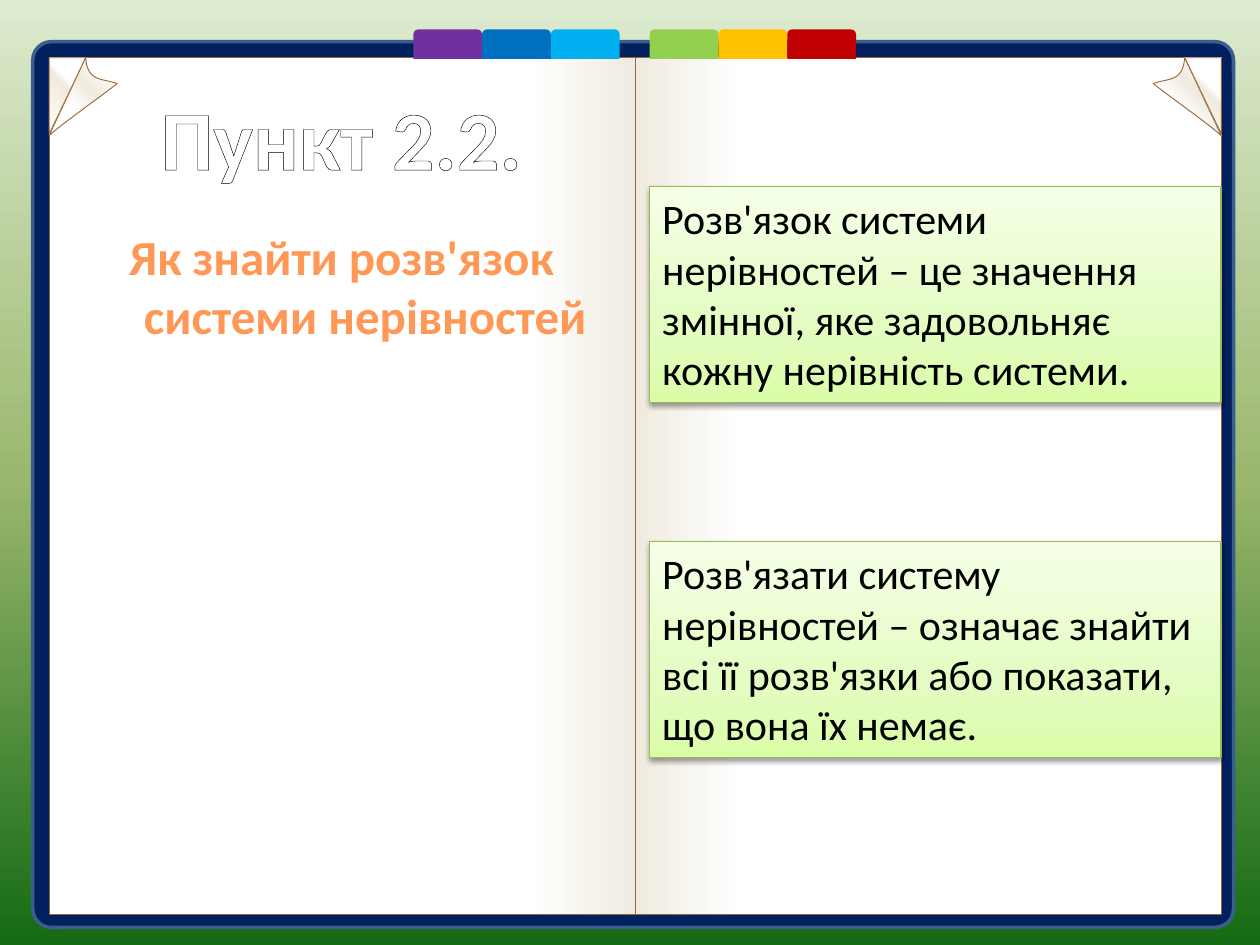
"""Build the notebook slide about solving systems of inequalities."""
from dataclasses import dataclass

from lxml.etree import SubElement
from pptx import Presentation
from pptx.dml.color import RGBColor
from pptx.enum.shapes import MSO_SHAPE as Preset
from pptx.enum.text import MSO_ANCHOR as Anchor
from pptx.enum.text import MSO_AUTO_SIZE as AutoSize
from pptx.enum.text import PP_ALIGN as Align
from pptx.oxml.ns import qn
from pptx.util import Pt

BLACK = RGBColor(0x00, 0x00, 0x00)
WHITE = RGBColor(0xFF, 0xFF, 0xFF)
NAVY = RGBColor(0x00, 0x20, 0x60)
STEEL = RGBColor(0x3A, 0x5F, 0x8C)
BROWN = RGBColor(0x99, 0x66, 0x33)
CREAM = RGBColor(0xF0, 0xEB, 0xE0)
OLIVE = RGBColor(0x98, 0xB9, 0x55)
PURPLE = RGBColor(0x70, 0x30, 0xA0)
BLUE = RGBColor(0x00, 0x70, 0xC0)
SKY = RGBColor(0x00, 0xB0, 0xF0)
GREEN = RGBColor(0x92, 0xD0, 0x50)
AMBER = RGBColor(0xFF, 0xC0, 0x00)
RED = RGBColor(0xC0, 0x00, 0x00)
MINT = RGBColor(0xDD, 0xEB, 0xCF)
MOSS = RGBColor(0x9C, 0xB8, 0x6E)
FOREST = RGBColor(0x15, 0x6B, 0x13)
LIME = RGBColor(0xDA, 0xFD, 0xA7)
PALE_LIME = RGBColor(0xE4, 0xFC, 0xC2)
LIME_WHITE = RGBColor(0xF5, 0xFF, 0xE7)
RUST = RGBColor(0x9D, 0x47, 0x00)
ORANGE = RGBColor(0xFF, 0x98, 0x56)
PEACH = RGBColor(0xFF, 0xF5, 0xF1)


@dataclass
class Gradient:
    """Stops as (percent, colour) pairs and a clockwise angle in degrees."""
    stops: tuple
    angle: int


BACKDROP = Gradient(((0, MINT), (50, MOSS), (100, FOREST)), 90)
PAGE_STOPS = ((0, WHITE), (82, WHITE), (100, CREAM))
CORNER = Gradient(((0, WHITE), (57, CREAM), (65, WHITE)), 315)
FOLD = Gradient(((12, WHITE), (40, CREAM), (65, WHITE)), 135)
CARD = Gradient(((0, LIME), (35, PALE_LIME), (100, LIME_WHITE)), 270)
QUESTION = Gradient(((0, RUST), (78, ORANGE), (100, PEACH)), 90)
PAGE_LINE = (BROWN, 0.5)
SPINE, PAGE_LEFT, PAGE_TOP = 363, 28.1, 33
PAGE_WIDTH, PAGE_HEIGHT = SPINE - PAGE_LEFT, 489.5
CARD_LEFT = 371.3


def bezier(start, control1, control2, end, steps=16):
    """Return points along a cubic curve, ends included."""
    def at(t):
        weights = ((1 - t) ** 3, 3 * t * (1 - t) ** 2, 3 * t * t * (1 - t), t ** 3)
        knots = (start, control1, control2, end)
        return tuple(sum(w * k[axis] for w, k in zip(weights, knots)) for axis in (0, 1))
    return [at(step / steps) for step in range(steps + 1)]


def mirror(points):
    """Reflect points across the notebook spine."""
    return [(2 * SPINE - x, y) for x, y in points]


class Notebook:
    """Holds the text style and the current slide, and draws its elements."""

    font_style = {"name": "Calibri", "bold": False}

    def __init__(self, slide):
        self.slide = slide

    def paint(self, fill, value, owner):
        """Apply a solid colour or a gradient to a fill of the owner."""
        if not isinstance(value, Gradient):
            fill.solid()
            fill.fore_color.rgb = value
            return
        fill.gradient()
        fill.gradient_angle = -value.angle % 360
        stop_list = next(owner.element.iter(qn("a:gsLst")))
        for stop in list(stop_list):
            stop_list.remove(stop)
        for percent, colour in value.stops:
            stop = SubElement(stop_list, qn("a:gs"), pos=str(percent * 1000))
            SubElement(stop, qn("a:srgbClr"), val=str(colour))

    def background(self, value):
        """Fill the slide background."""
        self.paint(self.slide.background.fill, value, self.slide)

    def finish(self, shape, fill, line):
        """Set the fill and line of a shape and clear its shadow."""
        self.paint(shape.fill, fill, shape)
        if line:
            colour, width = line
            shape.line.color.rgb = colour
            shape.line.width = Pt(width)
        else:
            shape.line.fill.background()
        shape.shadow.inherit = False
        return shape

    def block(self, preset, box, fill, line=None):
        """Draw a preset shape."""
        shape = self.slide.shapes.add_shape(preset, *map(Pt, box))
        return self.finish(shape, fill, line)

    def outline(self, points, fill, line):
        """Draw a closed freeform through the points."""
        (x, y), *rest = points
        builder = self.slide.shapes.build_freeform(Pt(x), Pt(y))
        builder.add_line_segments([(Pt(x), Pt(y)) for x, y in rest], close=True)
        return self.finish(builder.convert_to_shape(), fill, line)

    def letter(self, shape, text, colour, frame_style, align, **font_style):
        """Put one styled paragraph into a shape."""
        frame = shape.text_frame
        for name, value in {"word_wrap": True, **frame_style}.items():
            setattr(frame, name, value)
        paragraph = frame.paragraphs[0]
        paragraph.alignment = align
        run = paragraph.add_run()
        run.text = text
        for name, value in {**self.font_style, **font_style}.items():
            setattr(run.font, name, value)
        self.paint(run.font.fill, colour, shape)

    def heading(self, box, text, colour, size, anchor):
        """Add a bold centred text box."""
        shape = self.slide.shapes.add_textbox(*map(Pt, box))
        self.letter(shape, text, colour, {"vertical_anchor": anchor},
                    Align.CENTER, size=Pt(size), bold=True)
        return shape

    def outline_letters(self, shape, colour, width):
        """Trace the letters of a shape with a thin line."""
        properties = next(shape.element.iter(qn("a:rPr")))
        line = SubElement(properties, qn("a:ln"), w=str(Pt(width)))
        fill = SubElement(line, qn("a:solidFill"))
        SubElement(fill, qn("a:srgbClr"), val=str(colour))
        properties.insert(0, line)

    def hang(self, shape, indent):
        """Give the paragraph of a shape a hanging indent."""
        properties = next(shape.element.iter(qn("a:pPr")))
        properties.set("marL", str(Pt(indent)))
        properties.set("indent", str(Pt(-indent)))

    def card(self, top, text):
        """Draw a shadowed definition card on the right page."""
        shape = self.block(Preset.RECTANGLE, (CARD_LEFT, top, 326.4, 123.6), CARD, (OLIVE, 0.75))
        effects = next(shape.element.iter(qn("a:effectLst")))
        shadow = SubElement(effects, qn("a:outerShdw"), blurRad=str(Pt(3.1)),
                            dist=str(Pt(1.6)), dir="5400000", rotWithShape="0")
        colour = SubElement(shadow, qn("a:srgbClr"), val=str(BLACK))
        SubElement(colour, qn("a:alpha"), val="38000")
        self.letter(shape, text, BLACK,
                    {"vertical_anchor": Anchor.TOP, "auto_size": AutoSize.SHAPE_TO_FIT_TEXT},
                    Align.LEFT, size=Pt(24))


def main():
    """Build and save the slide."""
    deck = Presentation()
    deck.slide_width, deck.slide_height = Pt(720), Pt(540)
    notebook = Notebook(deck.slides.add_slide(deck.slide_layouts[6]))
    notebook.background(BACKDROP)

    cover = notebook.block(Preset.ROUNDED_RECTANGLE, (18.7, 23.8, 686.2, 506.2), NAVY, (STEEL, 2))
    cover.adjustments[0] = 0.021
    for left, angle in ((PAGE_LEFT, 0), (SPINE, 180)):
        notebook.block(Preset.RECTANGLE, (left, PAGE_TOP, PAGE_WIDTH, PAGE_HEIGHT),
                       Gradient(PAGE_STOPS, angle), PAGE_LINE)

    corner = [(49, PAGE_TOP), (PAGE_LEFT, 76.5), (PAGE_LEFT, PAGE_TOP)]
    fold = (bezier((67, 47.8), (53.3, 58.5), (36.7, 69.8), (PAGE_LEFT, 77.5))
            + bezier((49, PAGE_TOP), (50, 47), (58.3, 44.6), (67, 47.8)))
    for points, fill in ((corner, CORNER), (fold, FOLD)):
        for side in (points, mirror(points)):
            notebook.outline(side, fill, PAGE_LINE)

    tab_width = 39.3
    for start, colours in ((236.2, (PURPLE, BLUE, SKY)), (CARD_LEFT, (GREEN, AMBER, RED))):
        for index, colour in enumerate(colours):
            notebook.block(Preset.ROUND_2_SAME_RECTANGLE,
                           (start + index * tab_width, 16.8, tab_width, 16.8), colour)

    title = notebook.heading((36, 44.6, 318.2, 67), "Пункт 2.2.", WHITE, 48, Anchor.MIDDLE)
    notebook.outline_letters(title, BLACK, 0.75)
    question = notebook.heading((36, 126, 318.2, 380), "Як знайти розв'язок системи нерівностей",
                                QUESTION, 28, Anchor.TOP)
    notebook.hang(question, 27)

    notebook.card(106.6, "Розв'язок системи нерівностей – це значення змінної, "
                         "яке задовольняє кожну нерівність системи.")
    notebook.card(309.4, "Розв'язати систему нерівностей – означає знайти "
                         "всі її розв'язки або показати, що вона їх немає.")
    deck.save("out.pptx")


if __name__ == "__main__":
    main()
